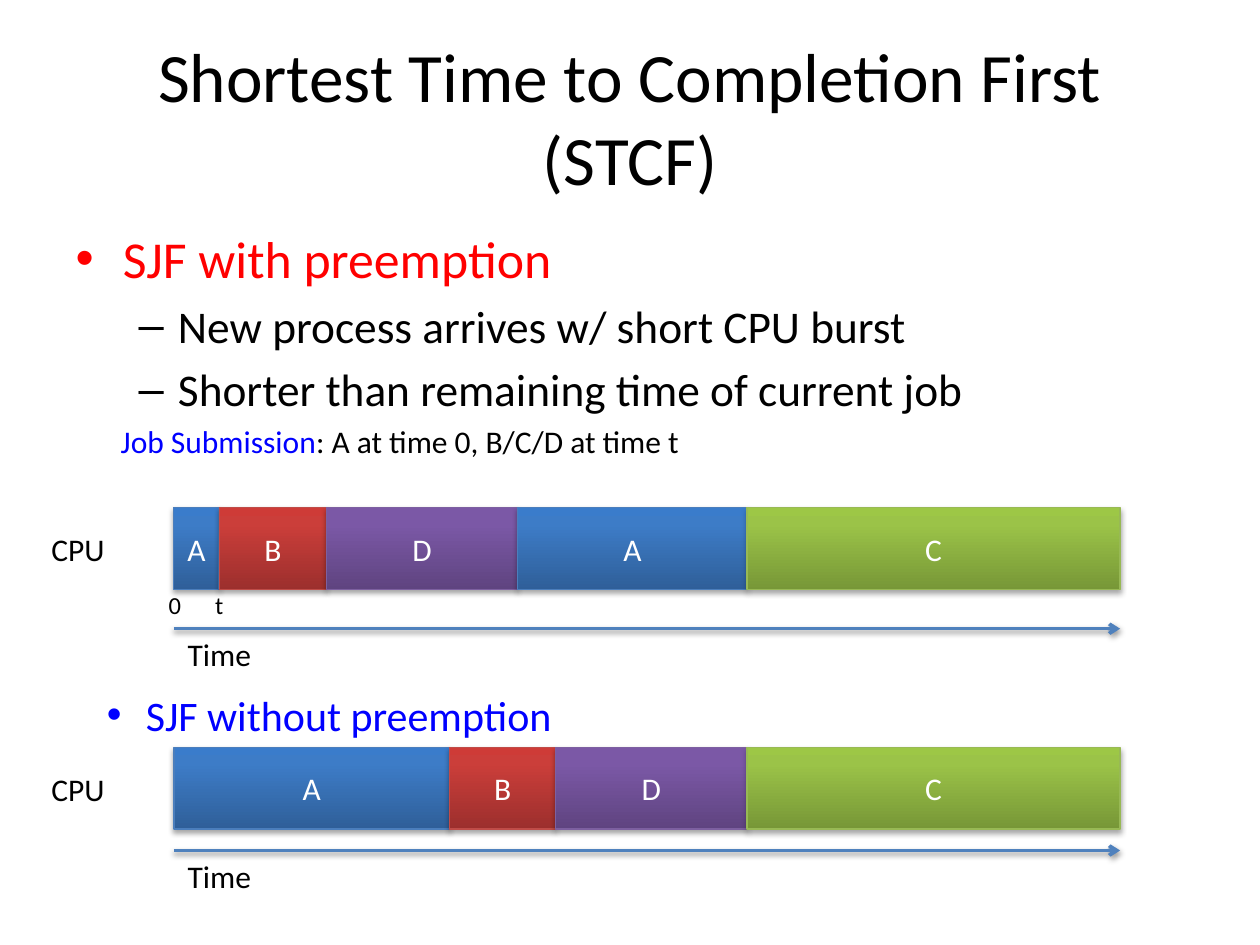
from copy import deepcopy
from lxml.etree import SubElement
from pptx import Presentation
from pptx.dml.color import RGBColor
from pptx.enum.shapes import MSO_CONNECTOR, MSO_SHAPE
from pptx.enum.text import MSO_ANCHOR, MSO_AUTO_SIZE, PP_ALIGN
from pptx.oxml import parse_xml
from pptx.oxml.ns import nsdecls, qn
from pptx.util import Inches, Pt

BLACK = RGBColor(0, 0, 0)
WHITE = RGBColor(255, 255, 255)
RED = RGBColor(255, 0, 0)
BLUE = RGBColor(0, 0, 255)
AXIS = RGBColor(0x4F, 0x81, 0xBD)
JOBS = {
    "A": [RGBColor(0x2F, 0x5F, 0x99), RGBColor(0x3D, 0x7C, 0xC7),
          RGBColor(0x3A, 0x7C, 0xCB), RGBColor(0x4B, 0x7E, 0xBC)],
    "B": [RGBColor(0x9C, 0x2F, 0x2D), RGBColor(0xCB, 0x3E, 0x3A),
          RGBColor(0xCE, 0x3B, 0x37), RGBColor(0xBF, 0x4C, 0x48)],
    "C": [RGBColor(0x77, 0x97, 0x37), RGBColor(0x9B, 0xC3, 0x48),
          RGBColor(0x9D, 0xC7, 0x46), RGBColor(0x98, 0xB9, 0x55)],
    "D": [RGBColor(0x5F, 0x44, 0x80), RGBColor(0x7B, 0x58, 0xA6),
          RGBColor(0x7C, 0x57, 0xA8), RGBColor(0x7D, 0x60, 0xA0)],
}


def write(para, text, size=18, color=BLACK, align=None):
    run = para.add_run()
    run.text = text
    run.font.name = "Calibri"
    run.font.size = Pt(size)
    run.font.color.rgb = color
    if align is not None:
        para.alignment = align


def shade(shape, dist, alpha):
    shape._element.spPr.append(parse_xml(
        f'<a:effectLst {nsdecls("a")}><a:outerShdw blurRad="{Pt(3.1)}" '
        f'dist="{Pt(dist)}" dir="5400000" rotWithShape="0"><a:srgbClr val="000000">'
        f'<a:alpha val="{alpha}000"/></a:srgbClr></a:outerShdw></a:effectLst>'))


deck = Presentation()
deck.slide_width, deck.slide_height = Inches(10), Inches(7.5)
slide = deck.slides.add_slide(deck.slide_layouts[1])
shapes = slide.shapes

title, body = slide.placeholders
for holder, top, height in [(title, 0.3, 1.25), (body, 1.75, 1.56)]:
    holder.left, holder.top = Inches(0.5), Inches(top)
    holder.width, holder.height = Inches(9), Inches(height)
    holder.text_frame.auto_size = MSO_AUTO_SIZE.NONE
title.text_frame.vertical_anchor = MSO_ANCHOR.MIDDLE
write(title.text_frame.paragraphs[0], "Shortest Time to Completion First (STCF)",
      size=39.6, align=PP_ALIGN.CENTER)

frame = body.text_frame
write(frame.paragraphs[0], "SJF with preemption", size=29.6, color=RED)
for text in ["New process arrives w/ short CPU burst",
             "Shorter than remaining time of current job"]:
    para = frame.add_paragraph()
    para.level = 1
    write(para, text, size=25.9)

charts = [
    (4.03, 4.99, "ABDAC", [1.38, 1.74, 2.59, 4.11, 5.93, 8.89]),
    (5.93, 6.75, "ABDC", [1.38, 3.57, 4.41, 5.93, 8.89]),
]
labels = [
    (0.86, 3.3, 4.75, 0.4, 18, [("Job Submission", BLUE),
                                (": A at time 0, B/C/D at time t", BLACK)]),
    (1.61, 4.63, 0.27, 0.34, 14, [("t", BLACK)]),
    (1.24, 4.63, 0.3, 0.34, 14, [("0", BLACK)]),
]

for top, base, jobs, edges in charts:
    for job, left, right in zip(jobs, edges, edges[1:]):
        dark, mid, light, edge = JOBS[job]
        bar = shapes.add_shape(MSO_SHAPE.RECTANGLE, Inches(left), Inches(top),
                               Inches(right - left), Inches(0.65))
        bar.fill.gradient()
        bar.fill.gradient_angle = 90
        stops = bar._element.spPr.find(qn("a:gradFill")).find(qn("a:gsLst"))
        stops.insert(1, deepcopy(stops[0]))
        for stop, place, tone in zip(bar.fill.gradient_stops, [0, 0.8, 1],
                                     [dark, mid, light]):
            stop.position = place
            stop.color.rgb = tone
        bar.line.color.rgb = edge
        bar.line.width = Pt(0.75)
        shade(bar, 1.8, 35)
        bar.text_frame.vertical_anchor = MSO_ANCHOR.MIDDLE
        write(bar.text_frame.paragraphs[0], job, color=WHITE, align=PP_ALIGN.CENTER)

    axis = shapes.add_connector(MSO_CONNECTOR.STRAIGHT, Inches(edges[0]), Inches(base),
                                Inches(edges[-1]), Inches(base))
    axis.line.color.rgb = AXIS
    axis.line.width = Pt(2)
    SubElement(axis.line._get_or_add_ln(), qn("a:tailEnd"), type="arrow")
    shade(axis, 1.6, 38)
    labels.append((1.39, base, 0.71, 0.4, 18, [("Time", BLACK)]))
    labels.append((0.31, top + 0.13, 0.63, 0.4, 18, [("CPU", BLACK)]))

for left, top, width, height, size, runs in labels:
    box = shapes.add_textbox(Inches(left), Inches(top), Inches(width), Inches(height))
    box.text_frame.word_wrap = False
    box.text_frame.auto_size = MSO_AUTO_SIZE.SHAPE_TO_FIT_TEXT
    for text, color in runs:
        write(box.text_frame.paragraphs[0], text, size=size, color=color)

note = shapes.add_textbox(Inches(0.75), Inches(5.42), Inches(5.18), Inches(0.5))
note.text_frame.word_wrap = True
note.text_frame.auto_size = MSO_AUTO_SIZE.SHAPE_TO_FIT_TEXT
para = note.text_frame.paragraphs[0]
write(para, "SJF without preemption", size=24, color=BLUE)
props = para._p.get_or_add_pPr()
props.set("marL", str(Inches(0.31)))
props.set("indent", str(Inches(-0.31)))
SubElement(props, qn("a:buFont"), typeface="Arial")
SubElement(props, qn("a:buChar"), char="•")

deck.save("out.pptx")
